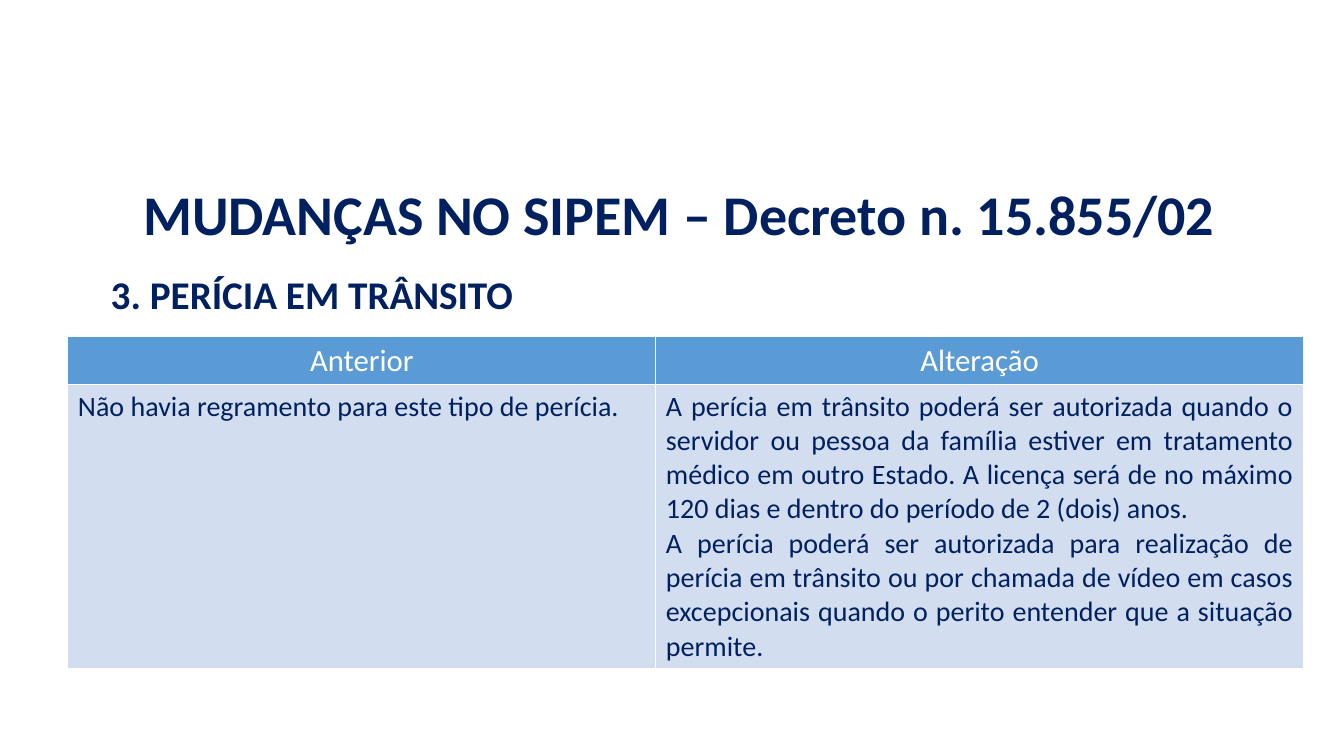
from lxml import etree
from pptx import Presentation
from pptx.dml.color import RGBColor
from pptx.enum.text import MSO_ANCHOR, MSO_AUTO_SIZE, PP_ALIGN
from pptx.oxml.ns import qn
from pptx.util import Pt

CENTER, JUSTIFY = PP_ALIGN.CENTER, PP_ALIGN.JUSTIFY
TOP, MIDDLE = MSO_ANCHOR.TOP, MSO_ANCHOR.MIDDLE
NO_AUTOFIT = MSO_AUTO_SIZE.NONE

NAVY = RGBColor(0x00, 0x20, 0x60)
BLUE = RGBColor(0x5B, 0x9B, 0xD5)
PALE_BLUE = RGBColor(0xD2, 0xDE, 0xEF)
WHITE = RGBColor(0xFF, 0xFF, 0xFF)

HEADERS = ["Anterior", "Alteração"]
BODY = [
    "Não havia regramento para este tipo de perícia.",
    "A perícia em trânsito poderá ser autorizada quando o servidor ou pessoa da "
    "família estiver em tratamento médico em outro Estado. A licença será de no "
    "máximo 120 dias e dentro do período de 2 (dois) anos.\n"
    "A perícia poderá ser autorizada para realização de perícia em trânsito ou por "
    "chamada de vídeo em casos excepcionais quando o perito entender que a situação "
    "permite.",
]


def write_text(text_frame, text, size, color, bold, alignment, line_spacing=1.0):
    text_frame.text = text
    for paragraph in text_frame.paragraphs:
        paragraph.alignment = alignment
        paragraph.line_spacing = line_spacing
        paragraph.font.name = "Calibri"
        paragraph.font.size = Pt(size)
        paragraph.font.bold = bold
        paragraph.font.color.rgb = color


def format_cell(cell, fill_color, anchor):
    """Give the cell thin white borders, a solid fill and a text anchor."""
    properties = cell._tc.get_or_add_tcPr()
    for side in ("a:lnL", "a:lnR", "a:lnT", "a:lnB"):
        line = etree.SubElement(properties, qn(side), w=str(Pt(1)))
        line_fill = etree.SubElement(line, qn("a:solidFill"))
        etree.SubElement(line_fill, qn("a:srgbClr"), val=str(WHITE))
    cell.fill.solid()
    cell.fill.fore_color.rgb = fill_color
    cell.vertical_anchor = anchor


presentation = Presentation()
presentation.slide_width, presentation.slide_height = Pt(960), Pt(540)
slide = presentation.slides.add_slide(presentation.slide_layouts[5])

title = slide.shapes.title
title.left, title.top, title.width, title.height = Pt(72), Pt(127.5), Pt(826), Pt(55.5)
write_text(title.text_frame, "MUDANÇAS NO SIPEM – Decreto n. 15.855/02",
           40, NAVY, True, CENTER, 0.9)
title.text_frame.vertical_anchor = MIDDLE
title.text_frame.auto_size = NO_AUTOFIT

subtitle = slide.shapes.add_textbox(Pt(72), Pt(193.5), Pt(799), Pt(277))
subtitle.text_frame.word_wrap = True
write_text(subtitle.text_frame, "3. PERÍCIA EM TRÂNSITO", 28, NAVY, True, PP_ALIGN.LEFT, 0.9)

table = slide.shapes.add_table(2, 2, Pt(48.5), Pt(240.5), Pt(882.5), Pt(237)).table
table.columns[0].width, table.columns[1].width = Pt(420), Pt(462.5)
table.rows[0].height, table.rows[1].height = Pt(34), Pt(203)

for column, (header, body) in enumerate(zip(HEADERS, BODY)):
    header_cell, body_cell = table.cell(0, column), table.cell(1, column)
    write_text(header_cell.text_frame, header, 22, WHITE, False, CENTER)
    format_cell(header_cell, BLUE, MIDDLE)
    write_text(body_cell.text_frame, body, 20, NAVY, False, JUSTIFY)
    format_cell(body_cell, PALE_BLUE, TOP)

presentation.save("out.pptx")
